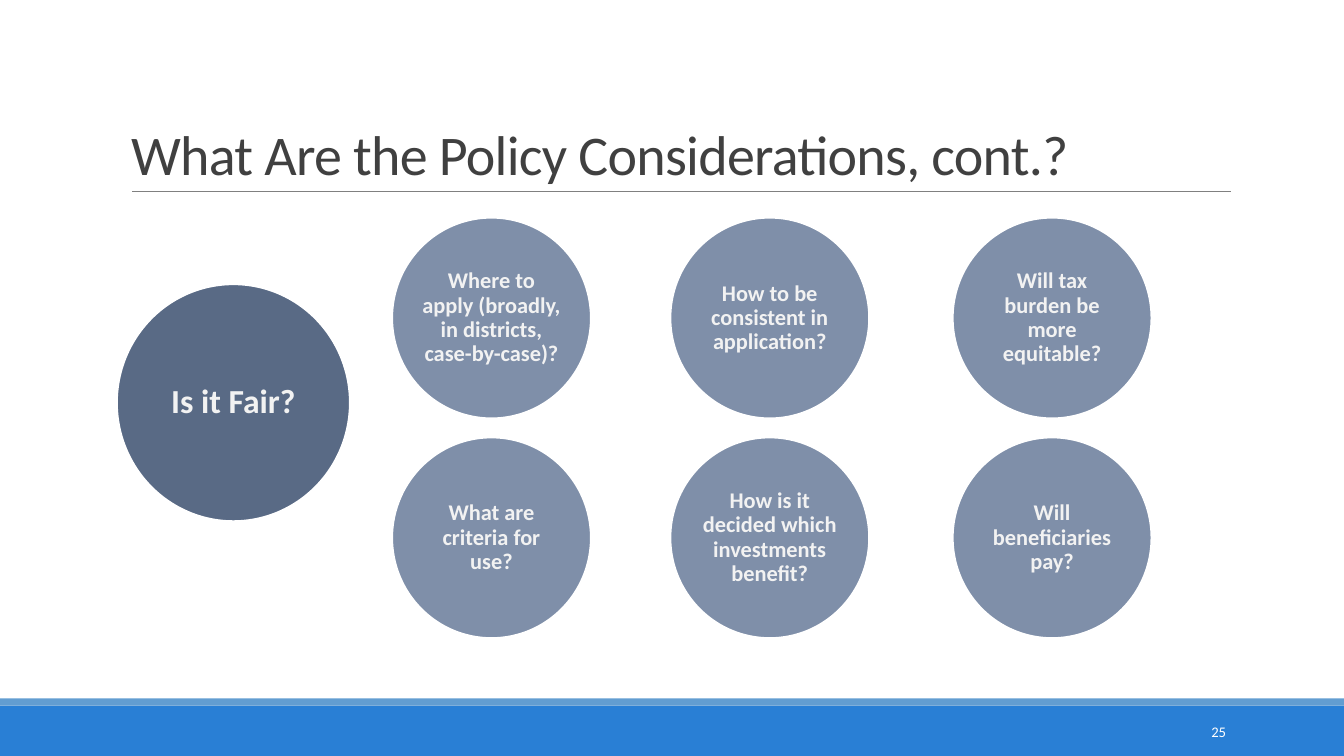
from lxml.etree import SubElement
from pptx import Presentation
from pptx.dml.color import RGBColor
from pptx.enum.shapes import MSO_CONNECTOR, MSO_SHAPE
from pptx.enum.text import MSO_ANCHOR, MSO_AUTO_SIZE, PP_ALIGN
from pptx.oxml.ns import qn
from pptx.util import Pt

PX = 9144  # EMU per px, 100 px to the inch
FONT = "Calibri"
COLORS = {
    "band": "297FD5",
    "strip": "629DD1",
    "rule": "808080",
    "title": "404040",
    "main": "596A85",
    "question": "7F8FA9",
    "circle_text": "F2F2F2",
    "white": "FFFFFF",
}
TITLE_ONLY = 5
COLUMN_LEFTS = (389, 665, 945)
ROW_TOPS = (216, 434)
QUESTIONS = (
    (
        "Where to apply (broadly, in districts, case-by-case)?",
        "How to be consistent in application?",
        "Will tax burden be more equitable?",
    ),
    (
        "What are criteria for use?",
        "How is it decided which investments benefit?",
        "Will beneficiaries pay?",
    ),
)


def px(*lengths):
    return [length * PX for length in lengths]


def color(name):
    return RGBColor.from_string(COLORS[name])


def write(frame, text, size, color_name, align, anchor, bold=False):
    """Put one formatted run in the frame and return its paragraph and run."""
    frame.word_wrap = True
    frame.auto_size = MSO_AUTO_SIZE.NONE
    frame.vertical_anchor = anchor
    para = frame.paragraphs[0]
    para.alignment = align
    span = para.add_run()
    span.text = text
    span.font.name = FONT
    span.font.size = Pt(size)
    span.font.bold = bold
    span.font.color.rgb = color(color_name)
    return para, span


def add_filled(page, kind, place, fill):
    shape = page.shapes.add_shape(kind, *px(*place))
    shape.shadow.inherit = False
    shape.fill.solid()
    shape.fill.fore_color.rgb = color(fill)
    shape.line.fill.background()
    return shape


def add_circle(page, place, fill, text, size):
    circle = add_filled(page, MSO_SHAPE.OVAL, place, fill)
    circle.line.color.rgb = color("white")
    circle.line.width = Pt(1.25)
    frame = circle.text_frame
    frame.margin_left = frame.margin_right = PX
    frame.margin_top = frame.margin_bottom = 0
    para, _ = write(frame, text, size, "circle_text",
                    PP_ALIGN.CENTER, MSO_ANCHOR.MIDDLE, bold=True)
    para.line_spacing = 0.9


def add_rule(page, left, right, y):
    rule = page.shapes.add_connector(
        MSO_CONNECTOR.STRAIGHT, *px(left, y, right, y))
    rule.line.color.rgb = color("rule")
    rule.line.width = Pt(0.5)
    SubElement(rule._element.spPr, qn("a:effectLst"))


def set_title(page, text):
    title = page.shapes.title
    title.left, title.top, title.width, title.height = px(120, 31, 1100, 159)
    para, span = write(title.text_frame, text, 40, "title",
                       PP_ALIGN.LEFT, MSO_ANCHOR.BOTTOM)
    para.line_spacing = 0.85
    span.font._element.set("spc", "-50")


def add_page_number(page, number):
    box = page.shapes.add_textbox(*px(1083, 706, 143, 40))
    write(box.text_frame, number, 10.5, "white",
          PP_ALIGN.RIGHT, MSO_ANCHOR.MIDDLE)


def main():
    deck = Presentation()
    deck.slide_width, deck.slide_height = px(1333, 750)
    page = deck.slides.add_slide(deck.slide_layouts[TITLE_ONLY])

    add_filled(page, MSO_SHAPE.RECTANGLE, (0, 700, 1333, 50), "band")
    add_filled(page, MSO_SHAPE.RECTANGLE, (0, 693, 1333, 7), "strip")
    add_rule(page, 131, 1221, 190)
    set_title(page, "What Are the Policy Considerations, cont.?")
    add_page_number(page, "25")

    add_circle(page, (116, 282, 231, 235), "main", "Is it Fair?", 24)
    for top, row in zip(ROW_TOPS, QUESTIONS):
        for left, question in zip(COLUMN_LEFTS, row):
            add_circle(page, (left, top, 197, 199), "question", question, 16)

    deck.save("out.pptx")


if __name__ == "__main__":
    main()
